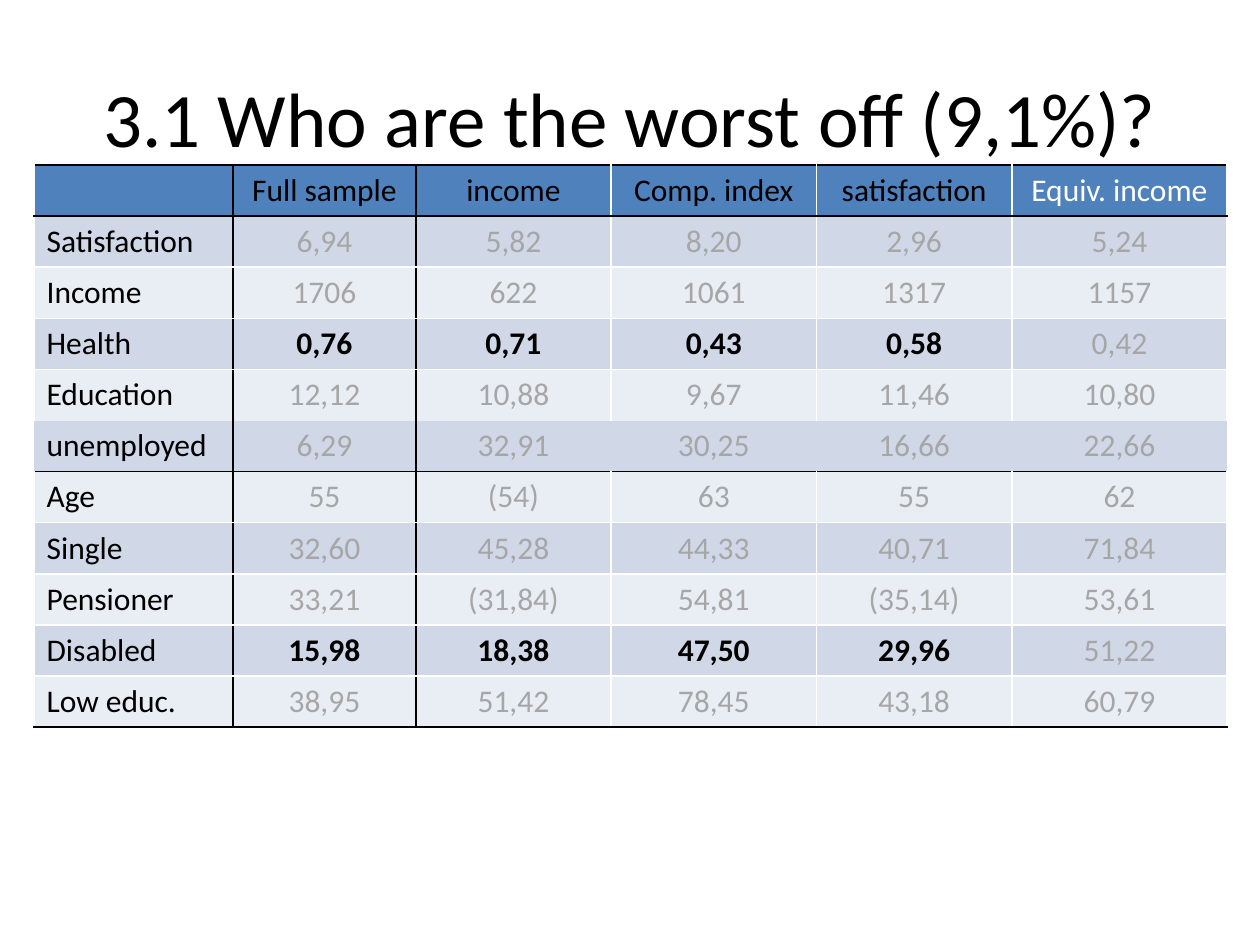
from dataclasses import dataclass

from lxml import etree
from pptx import Presentation
from pptx.dml.color import RGBColor
from pptx.enum.text import MSO_ANCHOR, PP_ALIGN
from pptx.oxml.ns import qn
from pptx.util import Inches, Pt

CENTER, LEFT = PP_ALIGN.CENTER, PP_ALIGN.LEFT
MIDDLE = MSO_ANCHOR.MIDDLE
TITLE_ONLY = 5


@dataclass(frozen=True)
class Theme:
    """Colours, font and type sizes of the slide."""
    font: str = "Calibri"
    title_size: int = 44
    table_size: int = 18
    black: str = "000000"
    white: str = "FFFFFF"
    muted: str = "A6A6A6"
    header: str = "4F81BD"
    bands: tuple = ("E9EDF4", "D0D8E8")


THEME = Theme()
TITLE = "3.1 Who are the worst off (9,1%)?"
ROWS = [
    ["", "Full sample", "income", "Comp. index", "satisfaction", "Equiv. income"],
    ["Satisfaction", "6,94", "5,82", "8,20", "2,96", "5,24"],
    ["Income", "1706", "622", "1061", "1317", "1157"],
    ["Health", "0,76", "0,71", "0,43", "0,58", "0,42"],
    ["Education", "12,12", "10,88", "9,67", "11,46", "10,80"],
    ["unemployed", "6,29", "32,91", "30,25", "16,66", "22,66"],
    ["Age", "55", "(54)", "63", "55", "62"],
    ["Single", "32,60", "45,28", "44,33", "40,71", "71,84"],
    ["Pensioner", "33,21", "(31,84)", "54,81", "(35,14)", "53,61"],
    ["Disabled", "15,98", "18,38", "47,50", "29,96", "51,22"],
    ["Low educ.", "38,95", "51,42", "78,45", "43,18", "60,79"],
]
COLUMN_WIDTHS = [1.58, 1.45, 1.55, 1.63, 1.55, 1.71]
LAST_COLUMN = len(COLUMN_WIDTHS) - 1
EMPHASIZED_ROWS = {"Health", "Disabled"}
UNEMPLOYED_ROW = 5
BLACK_RULES = {0, 1, UNEMPLOYED_ROW + 1, len(ROWS)}
BLACK_DIVIDERS = {1, 2}


def style_paragraph(paragraph, size, color, align, bold=False):
    """Set the font and alignment of a paragraph."""
    paragraph.alignment = align
    font = paragraph.font
    font.name, font.size, font.bold = THEME.font, Pt(size), bold
    font.color.rgb = RGBColor.from_string(color)


def rule_color(rule):
    """Return the colour of a horizontal rule, or None where there is none."""
    if rule in BLACK_RULES:
        return THEME.black
    return None if rule == UNEMPLOYED_ROW else THEME.white


def divider_color(row, divider):
    """Return the colour of a vertical divider, or None where there is none."""
    if divider in BLACK_DIVIDERS:
        return THEME.black
    return None if row == UNEMPLOYED_ROW else THEME.white


def set_borders(cell, left, right, top, bottom):
    """Draw the four borders of a cell, each a colour or None."""
    properties = cell._tc.get_or_add_tcPr()
    sides = zip(("a:lnL", "a:lnR", "a:lnT", "a:lnB"), (left, right, top, bottom))
    for position, (tag, color) in enumerate(sides):
        line = etree.Element(qn(tag), w=str(Pt(1)))
        if color:
            fill = etree.SubElement(line, qn("a:solidFill"))
            etree.SubElement(fill, qn("a:srgbClr"), val=color)
        else:
            etree.SubElement(line, qn("a:noFill"))
        properties.insert(position, line)


def text_style(row, column):
    """Return the colour and weight of the text in a cell."""
    if row == 0:
        return (THEME.white if column == LAST_COLUMN else THEME.black), False
    if column == 0:
        return THEME.black, False
    if ROWS[row][0] in EMPHASIZED_ROWS and column < LAST_COLUMN:
        return THEME.black, True
    return THEME.muted, False


def fill_cell(cell, row, column):
    """Write and format one cell of the comparison table."""
    cell.text = ROWS[row][column]
    color, bold = text_style(row, column)
    align = LEFT if column == 0 else CENTER
    style_paragraph(cell.text_frame.paragraphs[0], THEME.table_size, color, align, bold)
    cell.fill.solid()
    background = THEME.bands[row % 2] if row else THEME.header
    cell.fill.fore_color.rgb = RGBColor.from_string(background)
    set_borders(cell, divider_color(row, column), divider_color(row, column + 1),
                rule_color(row), rule_color(row + 1))


def add_title(slide):
    """Place the slide title."""
    title = slide.shapes.title
    title.left, title.top = Inches(0.5), Inches(0.3)
    title.width, title.height = Inches(9), Inches(1.25)
    title.text_frame.text = TITLE
    title.text_frame.vertical_anchor = MIDDLE
    style_paragraph(title.text_frame.paragraphs[0], THEME.title_size, THEME.black, CENTER)


def add_comparison_table(slide):
    """Add the table that compares the worst off under each measure."""
    table = slide.shapes.add_table(
        len(ROWS), len(COLUMN_WIDTHS),
        Inches(0.27), Inches(1.31), Inches(9.45), Inches(4.46)).table
    table.first_row = table.horz_banding = False
    for column, width in zip(table.columns, COLUMN_WIDTHS):
        column.width = Inches(width)
    for row, values in enumerate(ROWS):
        for column in range(len(values)):
            fill_cell(table.cell(row, column), row, column)


def main():
    """Build and save the presentation."""
    presentation = Presentation()
    presentation.slide_width, presentation.slide_height = Inches(10), Inches(7.5)
    slide = presentation.slides.add_slide(presentation.slide_layouts[TITLE_ONLY])
    add_title(slide)
    add_comparison_table(slide)
    presentation.save("out.pptx")


if __name__ == "__main__":
    main()
